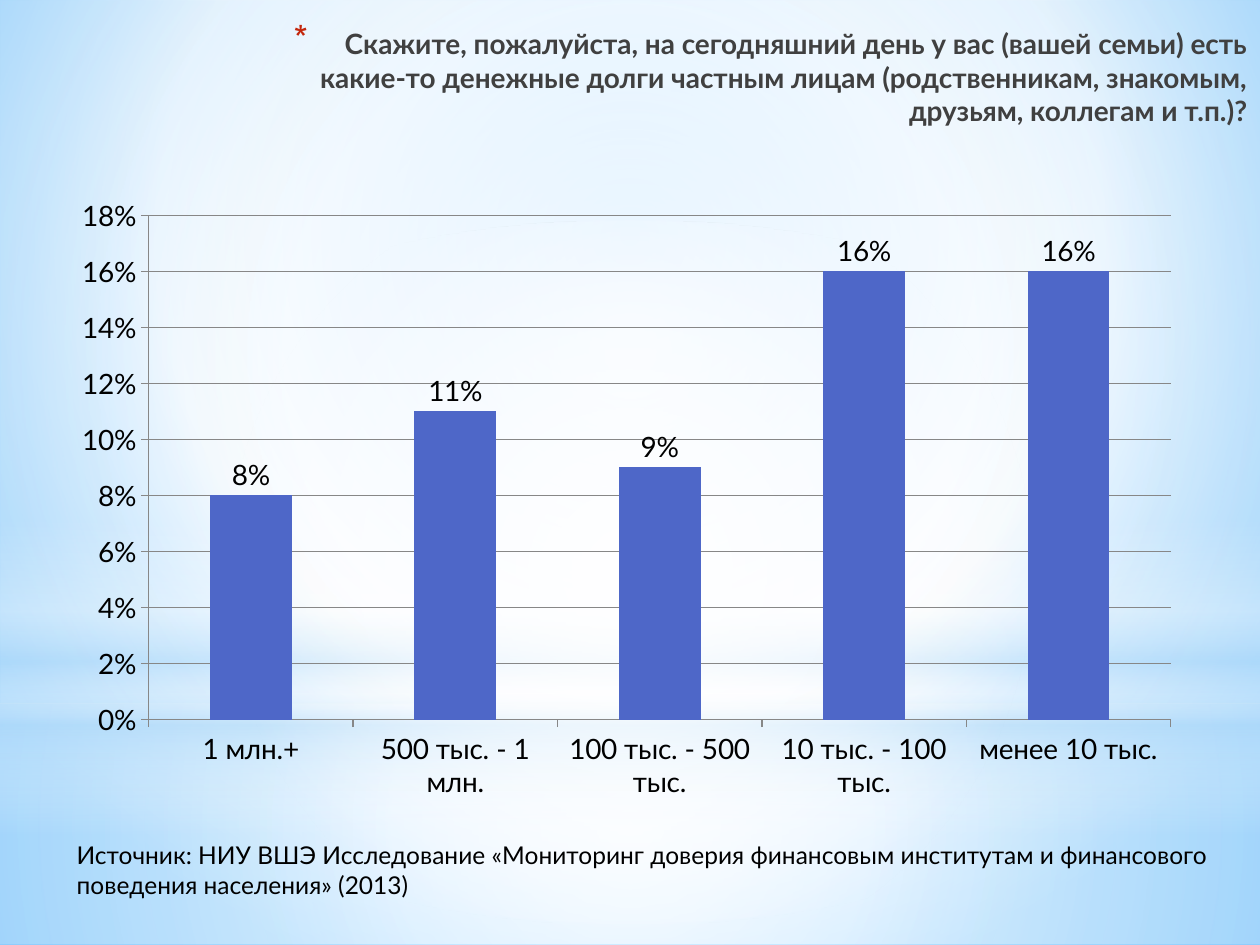
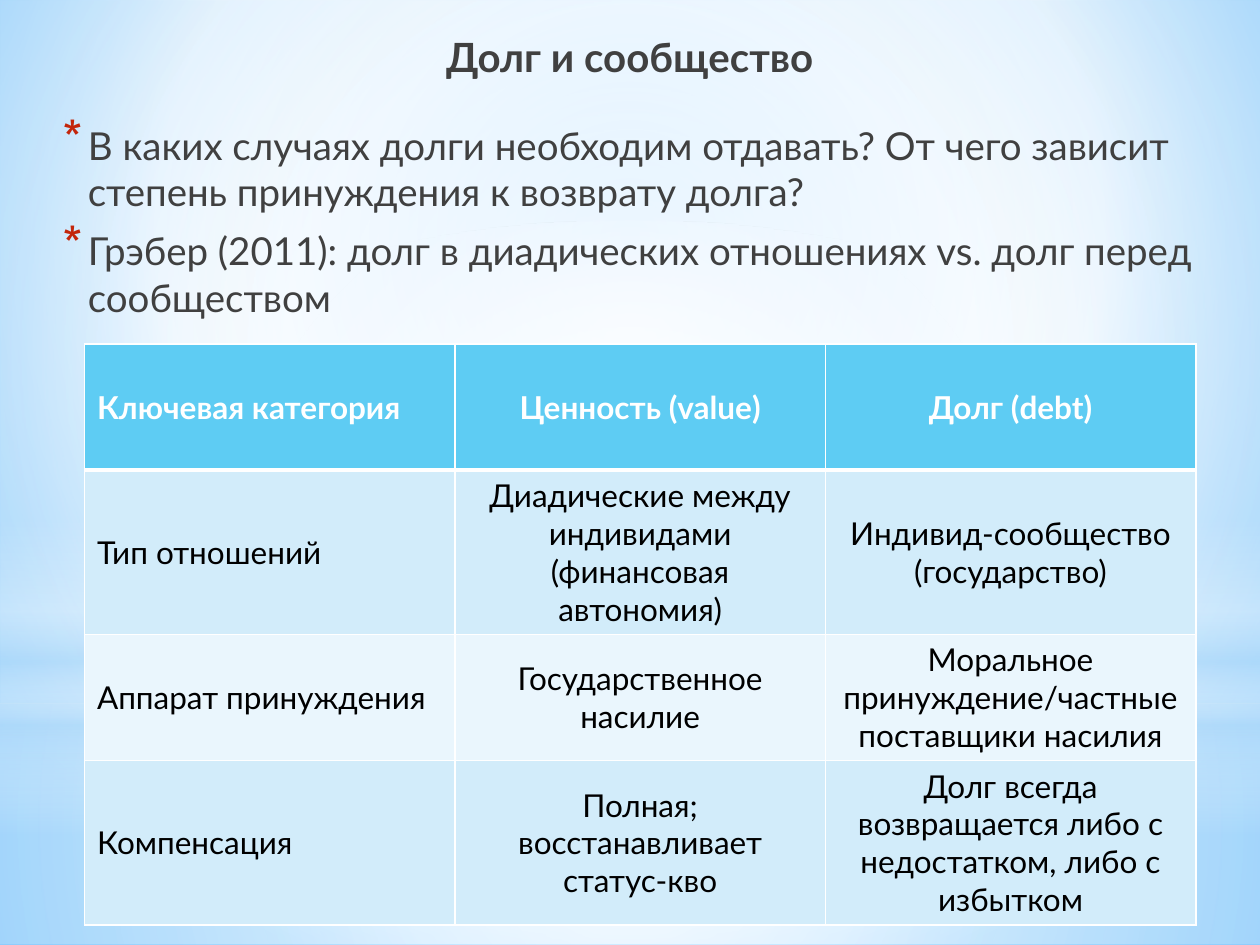
"""Builds two slides on private debts: a survey chart and a comparison table."""
from lxml import etree
from pptx import Presentation
from pptx.chart.data import CategoryChartData
from pptx.dml.color import RGBColor
from pptx.enum import chart as charts, shapes, text
from pptx.oxml import ns, parse_xml
from pptx.util import Pt

FONT = "Lato"
COLORS = {
    "black": "000000", "white": "FFFFFF", "ink": "404040", "navy": "212745",
    "haze": "B4DCFA", "sky": "9ED5FF", "deep_sky": "5BB9FF", "bullet": "C3260C",
    "bar": "4E67C8", "axis": "878787",
    "header": "5ECCF3", "odd_row": "D2ECFA", "even_row": "EAF6FD",
}
RGB = {name: RGBColor.from_string(value) for name, value in COLORS.items()}


def set_gradient(properties, stops, center=None):
    """Replace a solid fill by a vertical gradient, or a circular one around center."""
    stop_xml = "".join(
        f'<a:gs pos="{pos * 1000}"><a:srgbClr val="{COLORS[color]}">'
        f'<a:alpha val="{opacity * 1000}"/></a:srgbClr></a:gs>'
        for pos, color, opacity in stops)
    if center:
        sides = " ".join(f'{side}="{inset * 1000}"' for side, inset in zip("ltrb", center))
        shade = f'<a:path path="circle"><a:fillToRect {sides}/></a:path>'
    else:
        shade = '<a:lin ang="5400000" scaled="0"/>'
    gradient = parse_xml(f'<a:gradFill {ns.nsdecls("a")} rotWithShape="1">'
                         f'<a:gsLst>{stop_xml}</a:gsLst>{shade}</a:gradFill>')
    properties.replace(properties.find(ns.qn("a:solidFill")), gradient)


def add_bullet(paragraph, left, hanging, percent):
    """Give a paragraph a red asterisk and a hanging indent in points."""
    props = paragraph._p.get_or_add_pPr()
    props.set("marL", str(Pt(left)))
    props.set("indent", str(-Pt(hanging)))
    color = etree.SubElement(props, ns.qn("a:buClr"))
    etree.SubElement(color, ns.qn("a:srgbClr"), val=COLORS["bullet"])
    etree.SubElement(props, ns.qn("a:buSzPct"), val=str(percent * 1000))
    etree.SubElement(props, ns.qn("a:buChar"), char="*")


deck = Presentation()
deck.slide_width, deck.slide_height = Pt(720), Pt(540)
title_only = deck.slide_layouts[5]
survey = deck.slides.add_slide(title_only)
community = deck.slides.add_slide(title_only)

master = deck.slide_master
master.background.fill.solid()
set_gradient(master.element.xpath("p:cSld/p:bg/p:bgPr")[0],
             [(0, "sky", 100), (60, "white", 100), (100, "deep_sky", 100)], (20, 10, 20, 60))

MIDDLE = (50, 50, 50, 50)
RECTANGLE, OVAL = shapes.MSO_SHAPE.RECTANGLE, shapes.MSO_SHAPE.OVAL
glows = [
    (RECTANGLE, 402, 138, [(0, "white", 91), (37, "white", 76), (100, "haze", 79)], MIDDLE),
    (RECTANGLE, 0, 402, [(0, "white", 89), (48, "white", 62), (100, "haze", 79)], MIDDLE),
    (RECTANGLE, 297, 180, [(0, "white", 0), (29, "white", 30), (45, "haze", 40),
                           (55, "white", 26), (65, "haze", 60), (100, "white", 0)], None),
    (OVAL, 126, 402, [(0, "white", 100), (56, "white", 0)], MIDDLE),
]
for order, (outline, top, height, stops, center) in enumerate(glows):
    glow = survey.shapes.add_shape(outline, 0, Pt(top), Pt(720), Pt(height))
    glow.shadow.inherit = False
    glow.line.fill.background()
    glow.fill.solid()
    set_gradient(glow.element.spPr, stops, center)
    glow.element.xpath("p:nvSpPr/p:cNvPr")[0].set("id", str(20 + order))
    master.shapes.element.insert(2 + order, glow.element)

question = (" Скажите, пожалуйста, на сегодняшний день у вас (вашей семьи) есть какие-то "
            "денежные долги частным лицам (родственникам, знакомым, друзьям, коллегам и т.п.)?")
headings = [
    (survey, question, 140.4, 11.5, 579.6, 16, text.PP_ALIGN.RIGHT),
    (community, "Долг и сообщество", 8.6, 15.1, 702.8, 23, text.PP_ALIGN.CENTER),
]
for slide, wording, left, top, width, size, align in headings:
    heading = slide.shapes.title
    heading.left, heading.top, heading.width, heading.height = Pt(left), Pt(top), Pt(width), Pt(90)
    frame = heading.text_frame
    frame.text = wording
    frame.auto_size = text.MSO_AUTO_SIZE.NONE
    frame.vertical_anchor = text.MSO_ANCHOR.TOP
    frame.paragraphs[0].alignment = align
    run = frame.paragraphs[0].runs[0]
    run.font.size, run.font.bold = Pt(size), True
    run.font.fill.solid()
    set_gradient(run._r.rPr, [(0, "black", 100), (40, "ink", 100), (100, "navy", 65)])
    run.font.name = FONT
add_bullet(survey.shapes.title.text_frame.paragraphs[0], 25.2, 25.2, 128)

debts = CategoryChartData(number_format="0%")
debts.categories = ["1 млн.+", "500 тыс. - 1 млн.", "100 тыс. - 500 тыс.",
                    "10 тыс. - 100 тыс.", "менее 10 тыс."]
debts.add_series("Series 1", [0.08, 0.11, 0.09, 0.16, 0.16])
chart = survey.shapes.add_chart(charts.XL_CHART_TYPE.COLUMN_CLUSTERED,
                                Pt(34), Pt(106.5), Pt(648), Pt(356.5), debts).chart
chart.has_legend = chart.has_title = False
chart.font.name, chart.font.size = FONT, Pt(16)
chart.font.color.rgb = RGB["black"]

share_axis = chart.value_axis
share_axis.minimum_scale, share_axis.maximum_scale, share_axis.major_unit = 0, 0.18, 0.02
share_axis.tick_labels.number_format = "0%"
share_axis.tick_labels.number_format_is_linked = False
for line in (share_axis.format.line, share_axis.major_gridlines.format.line,
             chart.category_axis.format.line):
    line.color.rgb = RGB["axis"]
    line.width = Pt(0.75)

columns = chart.plots[0]
columns.gap_width = 150
columns.vary_by_categories = False
columns.series[0].format.fill.solid()
columns.series[0].format.fill.fore_color.rgb = RGB["bar"]
columns.has_data_labels = True
shares = columns.data_labels
shares.show_value = True
shares.number_format, shares.number_format_is_linked = "0%", False
shares.position = charts.XL_LABEL_POSITION.OUTSIDE_END

source = survey.shapes.add_textbox(Pt(36.7), Pt(476.6), Pt(663), Pt(41)).text_frame
source.word_wrap = True
source.text = ("Источник: НИУ ВШЭ Исследование «Мониторинг доверия финансовым институтам "
               "и финансового поведения населения» (2013)")
source_font = source.paragraphs[0].runs[0].font
source_font.name, source_font.size = FONT, Pt(14)
source_font.color.rgb = RGB["black"]

theses = community.shapes.add_textbox(Pt(25.2), Pt(66.2), Pt(674.6), Pt(408)).text_frame
theses.word_wrap = True
theses.text = ("В каких случаях долги необходим отдавать? От чего зависит степень принуждения "
               "к возврату долга?\n"
               "Грэбер (2011): долг в диадических отношениях vs. долг перед сообществом")
for thesis in theses.paragraphs:
    thesis.space_before, thesis.space_after = Pt(4.4), Pt(3)
    add_bullet(thesis, 18, 14.4, 130)
    thesis_font = thesis.runs[0].font
    thesis_font.name, thesis_font.size = FONT, Pt(22)
    thesis_font.color.rgb = RGB["ink"]

comparison = [
    ("Ключевая категория", "Ценность (value)", "Долг (debt)"),
    ("Тип отношений", "Диадические между индивидами (финансовая автономия)",
     "Индивид-сообщество (государство)"),
    ("Аппарат принуждения", "Государственное насилие",
     "Моральное принуждение/частные поставщики насилия"),
    ("Компенсация", "Полная; восстанавливает статус-кво",
     "Долг всегда возвращается либо с недостатком, либо с избытком"),
]
row_heights = [72, 94, 72, 94]
row_fills = ["header", "odd_row", "even_row", "odd_row"]
table = community.shapes.add_table(4, 3, Pt(48.3), Pt(196.5), Pt(635), Pt(332)).table
for row, wordings in enumerate(comparison):
    table.rows[row].height = Pt(row_heights[row])
    borders = {"lnL": 1, "lnR": 1, "lnT": 3 if row == 1 else 1, "lnB": 3 if row == 0 else 1}
    for column, wording in enumerate(wordings):
        cell = table.cell(row, column)
        cell.text = wording
        cell.vertical_anchor = text.MSO_ANCHOR.MIDDLE
        cell.fill.solid()
        cell.fill.fore_color.rgb = RGB[row_fills[row]]
        paragraph = cell.text_frame.paragraphs[0]
        paragraph.alignment = text.PP_ALIGN.CENTER if column else text.PP_ALIGN.LEFT
        cell_font = paragraph.runs[0].font
        cell_font.name, cell_font.size, cell_font.bold = FONT, Pt(18), row == 0
        cell_font.color.rgb = RGB["black" if row else "white"]
        for order, (side, width) in enumerate(borders.items()):
            cell._tc.get_or_add_tcPr().insert(order, parse_xml(
                f'<a:{side} {ns.nsdecls("a")} w="{Pt(width)}"><a:solidFill>'
                f'<a:srgbClr val="{COLORS["white"]}"/></a:solidFill></a:{side}>'))

deck.save("out.pptx")
